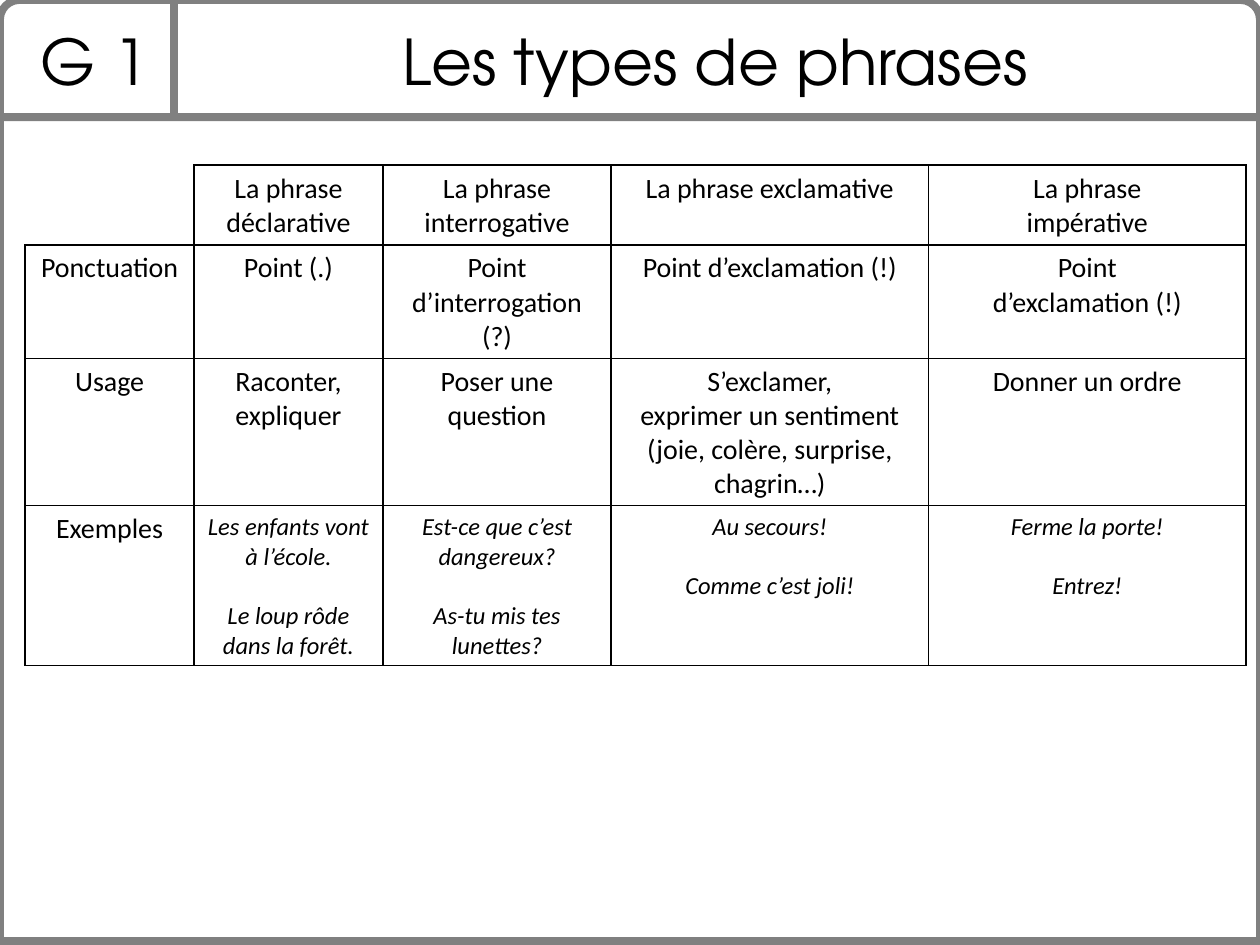
import dataclasses
import pptx
import pptx.dml.color
import pptx.enum.shapes
import pptx.enum.text
import pptx.oxml
import pptx.oxml.ns
import pptx.util
from pptx.util import Inches


@dataclasses.dataclass(frozen=True)
class Theme:
    ink: str = "000000"
    frame: str = "808080"
    title: int = 36
    body: int = 16
    sample: int = 14
    head: str = "TeX Gyre Adventor"
    font: str = "Calibri"


theme = Theme()
rgb = pptx.dml.color.RGBColor.from_string


def write(box, text, size=theme.body, font=theme.font, italic=False, gap=0):
    """Write one centred paragraph per line of text, gap points apart."""
    box.word_wrap = True
    for i, line in enumerate(text.split("\n")):
        para = box.add_paragraph() if i else box.paragraphs[0]
        para.alignment = pptx.enum.text.PP_ALIGN.CENTER
        if i and gap:
            para.space_before = pptx.util.Pt(gap)
        run = para.add_run()
        run.text = line
        run.font.size = pptx.util.Pt(size)
        run.font.name = font
        run.font.bold = False
        run.font.italic = italic
        run.font.color.rgb = rgb(theme.ink)


def edge(cell, side, shown):
    """Draw or hide one border of a table cell."""
    fill = (f'<a:solidFill><a:srgbClr val="{theme.ink}"/></a:solidFill>'
            if shown else "<a:noFill/>")
    space = pptx.oxml.ns.nsdecls("a")
    line = pptx.oxml.parse_xml(f'<a:ln{side} {space} w="12700">{fill}</a:ln{side}>')
    cell._tc.get_or_add_tcPr().append(line)


deck = pptx.Presentation()
deck.slide_width, deck.slide_height = Inches(10), Inches(7.5)
slide = deck.slides.add_slide(deck.slide_layouts[6])
shapes = slide.shapes

# Page frame: rounded header above a plain body
kinds = pptx.enum.shapes.MSO_SHAPE
for kind, top, high in [(kinds.ROUND_2_SAME_RECTANGLE, 0, 0.93),
                        (kinds.RECTANGLE, 0.93, 6.54)]:
    panel = shapes.add_shape(kind, 0, Inches(top), Inches(10), Inches(high))
    panel.shadow.inherit = False
    panel.fill.background()
    panel.line.color.rgb = rgb(theme.frame)
    panel.line.width = pptx.util.Pt(4.5)

# Header divider
rule = shapes.add_connector(pptx.enum.shapes.MSO_CONNECTOR.STRAIGHT,
                            Inches(1.38), Inches(-0.01), Inches(1.38), Inches(0.93))
rule.line.color.rgb = rgb(theme.frame)
rule.line.width = pptx.util.Pt(4.5)
rule._element.spPr.append(
    pptx.oxml.parse_xml(f'<a:effectLst {pptx.oxml.ns.nsdecls("a")}/>'))

# Lesson number and title
for text, left, wide in [("G 1", 0.2, 1.1), ("Les types de phrases", 1.54, 8.27)]:
    box = shapes.add_textbox(Inches(left), Inches(0.13), Inches(wide), Inches(0.71))
    write(box.text_frame, text, size=theme.title, font=theme.head)

# Table of sentence types
rows = [
    ["", "La phrase déclarative", "La phrase\ninterrogative",
     "La phrase exclamative", "La phrase\nimpérative"],
    ["Ponctuation", "Point (.)", "Point\nd’interrogation (?)",
     "Point d’exclamation (!)", "Point\nd’exclamation (!)"],
    ["Usage", "Raconter,\nexpliquer", "Poser une question",
     "S’exclamer,\nexprimer un sentiment (joie, colère, surprise, chagrin…)",
     "Donner un ordre"],
    ["Exemples", "Les enfants vont à l’école.\nLe loup rôde dans la forêt.",
     "Est-ce que c’est dangereux?\nAs-tu mis tes lunettes?",
     "Au secours!\nComme c’est joli!", "Ferme la porte!\nEntrez!"],
]
widths = [1.34, 1.5, 1.81, 2.52, 2.52]
heights = [0.63, 0.9, 1.17, 1.27]
table = shapes.add_table(len(rows), len(widths), Inches(0.2), Inches(1.31),
                         Inches(sum(widths)), Inches(sum(heights))).table
table.first_row = table.horz_banding = False
for col, wide in zip(table.columns, widths):
    col.width = Inches(wide)
for row, high in zip(table.rows, heights):
    row.height = Inches(high)

for r, row in enumerate(rows):
    for c, text in enumerate(row):
        cell = table.cell(r, c)
        corner = r == c == 0
        for side in "LRTB":
            edge(cell, side, not corner or side in "RB")
        cell.fill.background()
        if corner:
            continue
        if r == len(rows) - 1 and c:
            write(cell.text_frame, text, size=theme.sample, italic=True, gap=17)
        else:
            write(cell.text_frame, text)

deck.save("out.pptx")
